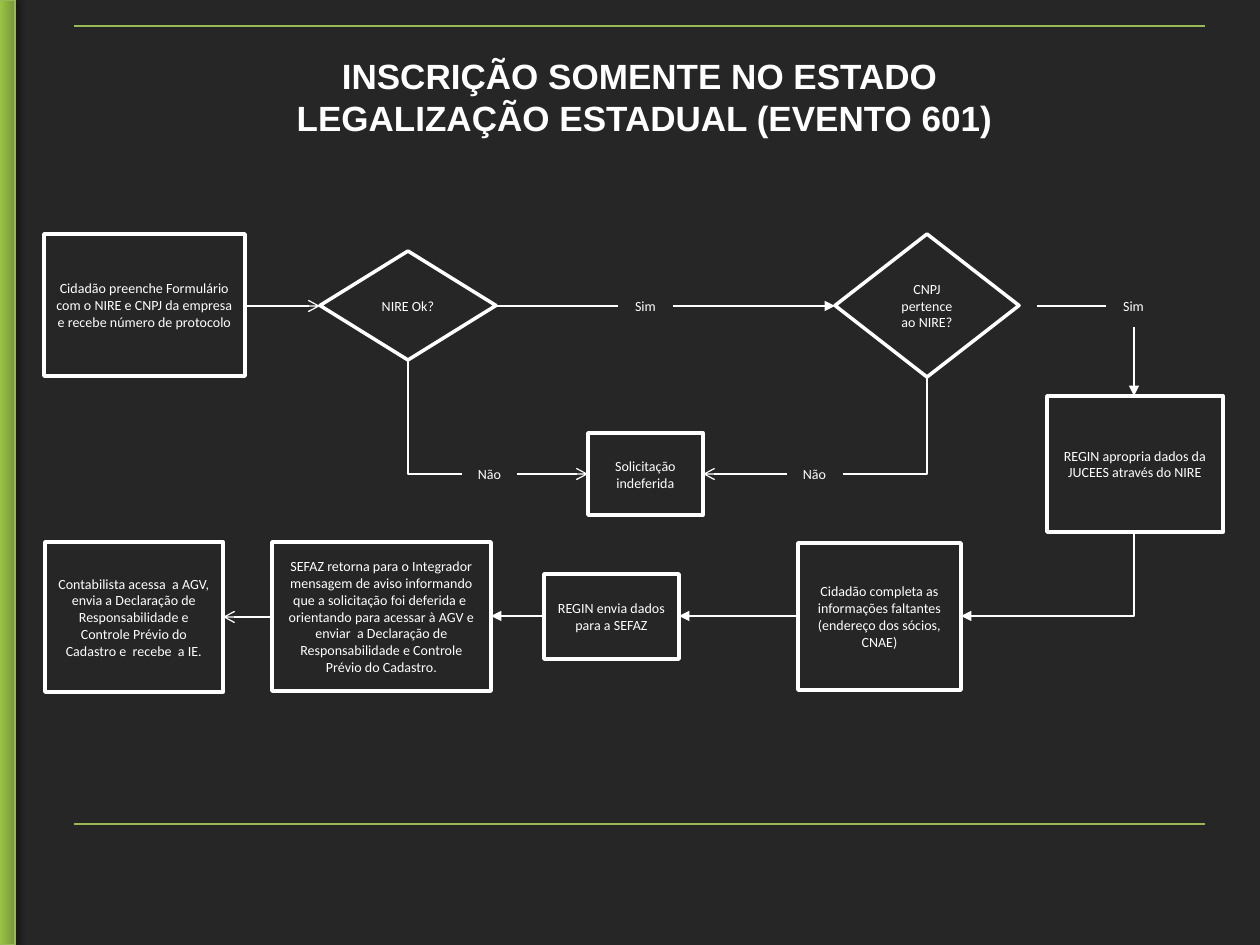
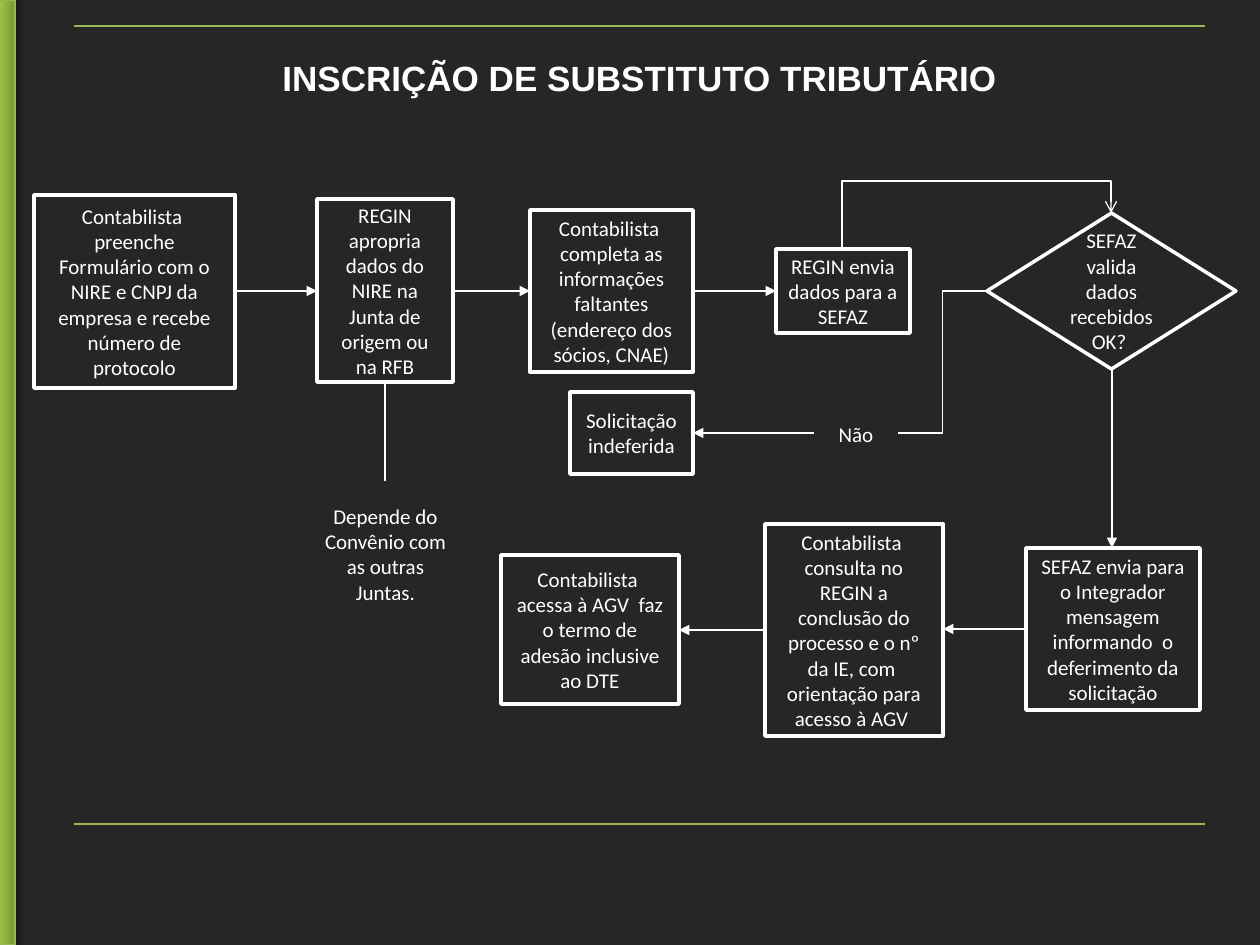
from lxml import etree
from pptx import Presentation
from pptx.dml.color import RGBColor
from pptx.enum.shapes import MSO_CONNECTOR, MSO_SHAPE
from pptx.enum.text import MSO_ANCHOR, MSO_AUTO_SIZE, PP_ALIGN
from pptx.oxml import parse_xml
from pptx.oxml.ns import nsdecls, qn
from pptx.util import Pt

EMU_PER_PX = 914400 / 126
BACKGROUND = RGBColor(0x26, 0x26, 0x26)
WHITE = RGBColor(0xFF, 0xFF, 0xFF)
RULE_GREEN = RGBColor(0x98, 0xB9, 0x55)
BAND_LIGHT = RGBColor(0x9D, 0xC7, 0x46)
BAND_DARK = RGBColor(0x77, 0x97, 0x37)
TITLE_FONT, BODY_FONT = "Arial", "Calibri"

PROCESS = MSO_SHAPE.FLOWCHART_PROCESS
DECISION = MSO_SHAPE.FLOWCHART_DECISION
DIAMOND = MSO_SHAPE.DIAMOND
RECTANGLE = MSO_SHAPE.RECTANGLE
STRAIGHT, ELBOW = MSO_CONNECTOR.STRAIGHT, MSO_CONNECTOR.ELBOW
CENTER = PP_ALIGN.CENTER
TOP, MIDDLE = MSO_ANCHOR.TOP, MSO_ANCHOR.MIDDLE
NO_AUTOFIT = MSO_AUTO_SIZE.NONE


def px(*lengths):
    return [round(n * EMU_PER_PX) for n in lengths]


def shadow_effect(blur, dist, angle, alpha):
    return parse_xml(
        f'<a:effectLst {nsdecls("a")}><a:outerShdw blurRad="{Pt(blur)}" dist="{Pt(dist)}" '
        f'dir="{angle * 60000}" algn="ctr" rotWithShape="0"><a:srgbClr val="000000">'
        f'<a:alpha val="{alpha * 1000}"/></a:srgbClr></a:outerShdw></a:effectLst>')


# Lines and arrows
def connector(s, points, head=None, tail=None, color=WHITE, kind=STRAIGHT):
    c = s.shapes.add_connector(kind, *px(*points))
    c.line.color.rgb = color
    c.line.width = Pt(0.75)
    ln = c.line._ln
    for tag, arrow in (("a:headEnd", head), ("a:tailEnd", tail)):
        if arrow:
            etree.SubElement(ln, qn(tag)).set("type", arrow)
    etree.SubElement(c._element.spPr, qn("a:effectLst"))
    return c


def corner(s, points, head=None):
    """One-bend line: leaves the first point sideways, meets the last vertically."""
    c = connector(s, points, head=head, kind=ELBOW)
    c._element.spPr.find(qn("a:prstGeom")).set("prst", "bentConnector2")


def loop_over(s, x1, y1, x2, y2, top, tail):
    """Line that rises from the first point to top and comes down on the last."""
    mid_x, mid_y = (x1 + x2) / 2, (y1 + y2) / 2
    half_w, half_h = (y1 - y2) / 2, (x2 - x1) / 2
    c = connector(s, (mid_x + half_w, mid_y + half_h, mid_x - half_w, mid_y - half_h),
                  tail=tail, kind=ELBOW)
    spPr = c._element.spPr
    spPr.find(qn("a:xfrm")).set("rot", "5400000")
    guide = etree.SubElement(spPr.find(qn("a:prstGeom")).get_or_add_avLst(), qn("a:gd"))
    guide.set("name", "adj1")
    guide.set("fmla", f"val {round((y1 - top) / (y1 - y2) * 100000)}")


# Flowchart steps and labels
def step(s, text, box, size, kind=PROCESS, outlined=True):
    sp = s.shapes.add_shape(kind, *px(*box))
    sp.shadow.inherit = False
    sp.fill.background()
    if outlined:
        sp.line.color.rgb = WHITE
        sp.line.width = Pt(2)
    else:
        sp.line.fill.background()
    tf = sp.text_frame
    tf.word_wrap = True
    tf.vertical_anchor = MIDDLE
    p = tf.paragraphs[0]
    p.text = text
    p.alignment = CENTER
    p.font.size = Pt(size)
    p.font.name = BODY_FONT
    p.font.color.rgb = WHITE


def label(s, text, box, size):
    step(s, text, box, size, outlined=False)


# Shared frame: green rules, side band, title
def add_slide(prs, title_lines, title_box):
    s = prs.slides.add_slide(prs.slide_layouts[5])
    for y in (26, 824):
        connector(s, (74, y, 1205, y), color=RULE_GREEN)

    band = s.shapes.add_shape(RECTANGLE, *px(-5, 0, 20, 945))
    band.fill.gradient()
    band.fill.gradient_angle = 0
    for stop, color, position in zip(band.fill.gradient_stops,
                                     (BAND_LIGHT, BAND_DARK), (0.2, 1)):
        stop.color.rgb = color
        stop.position = position
    band.line.color.rgb = RULE_GREEN
    band.line.width = Pt(0.75)
    band._element.spPr.append(shadow_effect(3.1, 1.8, 0, 35))

    title = s.shapes.title
    title.left, title.top, title.width, title.height = px(*title_box)
    tf = title.text_frame
    tf.word_wrap = True
    tf.auto_size = NO_AUTOFIT
    tf.vertical_anchor = TOP
    for i, line in enumerate(title_lines):
        p = tf.paragraphs[0] if i == 0 else tf.add_paragraph()
        p.text = line
        p.alignment = CENTER
        p.space_before = Pt(0)
        p.font.size = Pt(20)
        p.font.bold = True
        p.font.color.rgb = WHITE
        p.font._element.append(shadow_effect(3, 3, 45, 45))
        p.font.name = TITLE_FONT
    return s


def state_registration(prs):
    s = add_slide(prs, ["INSCRIÇÃO SOMENTE NO ESTADO ", "LEGALIZAÇÃO ESTADUAL (EVENTO 601)"],
                  (84, 48, 1121, 97))
    # Steps
    for text, box, kind in [
        ("Cidadão preenche Formulário com o NIRE e CNPJ da empresa e recebe número de protocolo",
         (44, 234, 201, 142), PROCESS),
        ("NIRE Ok?", (320, 251, 176, 109), DIAMOND),
        ("CNPJ pertence ao NIRE?", (835, 234, 184, 143), DECISION),
        ("Solicitação indeferida", (588, 433, 115, 82), PROCESS),
        ("REGIN apropria dados da JUCEES através do NIRE", (1047, 396, 176, 136), PROCESS),
        ("Cidadão completa as informações faltantes (endereço dos sócios, CNAE)",
         (798, 543, 163, 147), PROCESS),
        ("REGIN envia dados para a SEFAZ", (544, 574, 135, 85), PROCESS),
        ("SEFAZ retorna para o Integrador mensagem de aviso informando que a solicitação foi "
         "deferida e  orientando para acessar à AGV e enviar  a Declaração de Responsabilidade "
         "e Controle Prévio do Cadastro.", (272, 542, 219, 149), PROCESS),
        ("Contabilista acessa  a AGV, envia a Declaração de Responsabilidade e Controle Prévio "
         "do Cadastro e  recebe  a IE.", (45, 542, 178, 150), PROCESS),
    ]:
        step(s, text, box, 8, kind)
    for text, x, y in [("Sim", 618, 285), ("Sim", 1106, 285), ("Não", 462, 453), ("Não", 787, 453)]:
        label(s, text, (x, y, 55, 42), 8)

    # Flow
    for points, tail in [
        ((245, 306, 320, 306), "arrow"),
        ((496, 306, 618, 306), None),
        ((673, 306, 835, 306), "triangle"),
        ((1037, 306, 1106, 306), None),
        ((1134, 327, 1134, 396), "triangle"),
        ((517, 474, 588, 474), "arrow"),
        ((787, 474, 703, 474), "arrow"),
        ((798, 616, 679, 616), "triangle"),
        ((544, 616, 491, 616), "triangle"),
        ((272, 617, 223, 617), "arrow"),
    ]:
        connector(s, points, tail=tail)
    corner(s, (462, 474, 408, 360))
    corner(s, (843, 474, 927, 377))
    corner(s, (961, 616, 1134, 532), head="triangle")


def tax_substitute(prs):
    s = add_slide(prs, ["INSCRIÇÃO DE SUBSTITUTO TRIBUTÁRIO "], (84, 50, 1121, 55))
    # Steps
    for text, box, kind in [
        ("Contabilista  preenche Formulário com o NIRE e CNPJ da empresa e recebe número de "
         "protocolo", (34, 195, 201, 193), PROCESS),
        ("REGIN apropria dados do NIRE na Junta de origem ou na RFB",
         (317, 199, 136, 183), PROCESS),
        ("Contabilista  completa as informações faltantes (endereço dos sócios, CNAE)",
         (530, 210, 163, 162), PROCESS),
        ("REGIN envia dados para a SEFAZ", (776, 249, 134, 84), PROCESS),
        ("SEFAZ valida dados recebidos OK? ", (987, 213, 249, 156), DECISION),
        ("Solicitação indeferida", (570, 392, 123, 82), PROCESS),
        ("SEFAZ envia para o Integrador mensagem informando  o deferimento da solicitação",
         (1026, 548, 174, 162), PROCESS),
        ("Contabilista  consulta no REGIN a conclusão do processo e o nº da IE, com  orientação "
         "para acesso à AGV ", (765, 524, 178, 212), PROCESS),
        ("Contabilista  acessa à AGV  faz o termo de adesão inclusive ao DTE",
         (501, 555, 178, 149), PROCESS),
    ]:
        step(s, text, box, 12, kind)
    label(s, "Depende do Convênio com as outras Juntas.", (304, 481, 163, 146), 12)
    label(s, "Não", (814, 413, 84, 42), 12)

    # Flow
    connector(s, (385, 382, 385, 481))
    for points in [
        (235, 291, 317, 291),
        (453, 291, 530, 291),
        (693, 291, 776, 291),
        (1112, 369, 1112, 548),
        (1026, 629, 943, 629),
        (765, 630, 679, 630),
        (814, 433, 693, 433),
    ]:
        connector(s, points, tail="triangle")
    connector(s, (987, 291, 898, 433), kind=ELBOW)
    loop_over(s, 842, 249, 1111, 213, 181, "arrow")


def main():
    prs = Presentation()
    prs.slide_width, prs.slide_height = px(1260, 945)
    fill = prs.slide_master.background.fill
    fill.solid()
    fill.fore_color.rgb = BACKGROUND
    state_registration(prs)
    tax_substitute(prs)
    prs.save("out.pptx")


if __name__ == "__main__":
    main()
